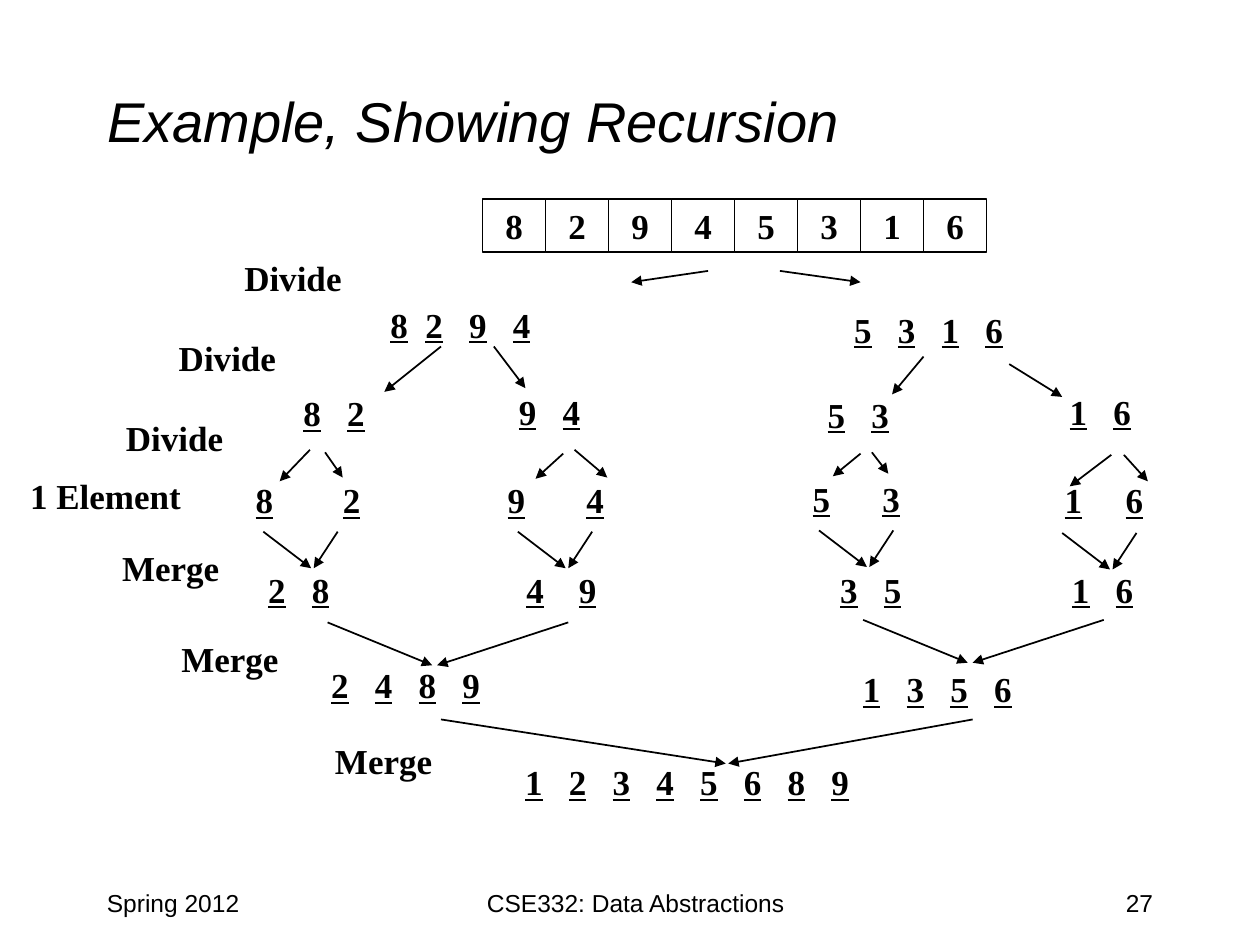
from itertools import accumulate

from lxml import etree
from pptx import Presentation
from pptx.dml.color import RGBColor
from pptx.enum import shapes, text
from pptx.oxml import ns
from pptx.util import Inches, Pt

BLACK = "000000"
SERIF, SANS = "Times New Roman", "Arial"
DIGIT, SPACE = 0.139, 0.0694
LINE_HEIGHT = 0.44


def colour(value):
    """Turn a hex string into a colour."""
    return RGBColor.from_string(value)


def format_runs(paragraph, font, size, bold=False, italic=False):
    """Give every run of a paragraph the same typeface and colour."""
    for run in paragraph.runs:
        run.font.name, run.font.size = font, Pt(size)
        run.font.bold, run.font.italic = bold, italic
        run.font.color.rgb = colour(BLACK)


def add_text(slide, left, top, width, height, wording, font=SERIF, size=20,
             bold=True, align=text.PP_ALIGN.LEFT):
    """Place one line of text and return its paragraph."""
    frame = slide.shapes.add_textbox(
        Inches(left), Inches(top), Inches(width), Inches(height)).text_frame
    frame.word_wrap = True
    paragraph = frame.paragraphs[0]
    paragraph.text = wording
    paragraph.alignment = align
    format_runs(paragraph, font, size, bold)
    return paragraph


def add_list(slide, left, top, numbers, gaps=None, joined=True):
    """Place an underlined list of digits, with gaps counted in space widths."""
    gaps = gaps or [3] * (len(numbers) - 1)
    stops = list(accumulate(DIGIT + gap * SPACE for gap in gaps))
    paragraph = add_text(slide, left, top, stops[-1] + 0.36, LINE_HEIGHT, "")
    tabs = etree.SubElement(paragraph._p.get_or_add_pPr(), ns.qn("a:tabLst"))
    for stop in stops:
        etree.SubElement(tabs, ns.qn("a:tab"), pos=str(Inches(stop)), algn="l")
    pieces = ["\t".join(numbers)] if joined else "\t".join(numbers)
    for piece in pieces:
        run = paragraph.add_run()
        run.text = piece
        run.font.underline = piece != "\t"
    format_runs(paragraph, SERIF, 20, bold=True)


def add_arrow(slide, x1, y1, x2, y2):
    """Draw a thin arrow that points at its second end."""
    arrow = slide.shapes.add_connector(
        shapes.MSO_CONNECTOR.STRAIGHT, Inches(x1), Inches(y1), Inches(x2), Inches(y2))
    arrow.line.color.rgb = colour(BLACK)
    arrow.line.width = Pt(1)
    etree.SubElement(arrow.line._get_or_add_ln(), ns.qn("a:tailEnd"), type="triangle")
    etree.SubElement(arrow._element.spPr, ns.qn("a:effectLst"))


def add_merge_arrows(slide, left, top, meeting, width, drop, gap):
    """Draw two arrows that come together below the span they start from."""
    add_arrow(slide, left, top, left + meeting, top + drop)
    add_arrow(slide, left + width, top, left + meeting + gap, top + drop)


def add_title(slide, left, top, width, height):
    """Move and format the title placeholder."""
    title = slide.shapes.title
    title.left, title.top = Inches(left), Inches(top)
    title.width, title.height = Inches(width), Inches(height)
    frame = title.text_frame
    frame.text = "Example, Showing Recursion"
    frame.vertical_anchor = text.MSO_ANCHOR.MIDDLE
    frame.paragraphs[0].alignment = text.PP_ALIGN.LEFT
    format_runs(frame.paragraphs[0], SANS, 32, italic=True)


def add_footer(slide, left, top):
    """Place the term, the course and the page number."""
    for offset, width, wording, align in (
            (0, 2.08, "Spring 2012", text.PP_ALIGN.LEFT),
            (2.42, 3.75, "CSE332: Data Abstractions", text.PP_ALIGN.CENTER),
            (6.42, 2.08, "27", text.PP_ALIGN.RIGHT)):
        add_text(slide, left + offset, top, width, 0.5, wording, SANS, 14, False, align)


def add_array(slide, left, top, width, height, numbers):
    """Draw the unsorted array as a row of equal cells."""
    cell_width = width / len(numbers)
    for index, number in enumerate(numbers):
        cell = slide.shapes.add_shape(
            shapes.MSO_SHAPE.RECTANGLE, Inches(left + index * cell_width),
            Inches(top), Inches(cell_width), Inches(height))
        cell.shadow.inherit = False
        cell.fill.background()
        cell.line.color.rgb = colour(BLACK)
        cell.line.width = Pt(0.75)
        frame = cell.text_frame
        frame.word_wrap = False
        frame.vertical_anchor = text.MSO_ANCHOR.MIDDLE
        frame.text = number
        frame.paragraphs[0].alignment = text.PP_ALIGN.CENTER
        format_runs(frame.paragraphs[0], SERIF, 20, bold=True)


def add_step_labels(slide, left, top):
    """Name each step down the left side."""
    for x, y, label in ((1.7, 0, "Divide"), (1.18, 0.63, "Divide"),
                        (0.76, 1.27, "Divide"), (0, 1.73, "1 Element"),
                        (0.73, 2.3, "Merge"), (1.2, 3.02, "Merge"),
                        (2.42, 3.83, "Merge")):
        add_text(slide, left + x, top + y, 1.45, LINE_HEIGHT, label)


def add_divide_steps(slide, left, top):
    """Split the array into halves, pairs and single elements."""
    for x, y, numbers, gaps in (
            (1, 0.36, "8294", [2, 3, 3]), (4.68, 0.4, "5316", None),
            (0.31, 1.06, "82", None), (2.02, 1.05, "94", None),
            (4.47, 1.07, "53", None), (6.39, 1.05, "16", None)):
        add_list(slide, left + x, top + y, numbers, gaps)
    for x, y, numbers, gap in ((-0.07, 1.75, "82", 8), (1.93, 1.75, "94", 7),
                               (4.35, 1.74, "53", 6), (6.35, 1.75, "16", 5)):
        add_list(slide, left + x, top + y, numbers, [gap], joined=False)
    for x1, y1, x2, y2 in (
            (3.62, 0.15, 3.01, 0.24), (4.19, 0.15, 4.83, 0.24),
            (1.5, 0.75, 1.05, 1.11), (1.92, 0.75, 2.17, 1.08),
            (5.33, 0.83, 5.08, 1.13), (6.01, 0.89, 6.43, 1.15),
            (0.46, 1.57, 0.22, 1.82), (0.58, 1.59, 0.72, 1.79),
            (2.47, 1.6, 2.25, 1.8), (2.56, 1.57, 2.82, 1.79),
            (4.83, 1.6, 4.61, 1.78), (4.92, 1.59, 5.05, 1.76),
            (6.82, 1.61, 6.49, 1.86), (6.92, 1.61, 7.11, 1.82)):
        add_arrow(slide, left + x1, top + y1, left + x2, top + y2)


def add_merge_steps(slide, left, top):
    """Join single elements into sorted pairs, halves and the whole."""
    for x, y, numbers, gaps in (
            (0.03, 0.46, "28", None), (2.08, 0.46, "49", [4]),
            (4.57, 0.46, "35", None), (6.41, 0.46, "16", None),
            (0.53, 1.22, "2489", None), (4.75, 1.25, "1356", None),
            (2.07, 1.99, "12345689", None)):
        add_list(slide, left + x, top + y, numbers, gaps)
    for x, y in ((0.09, 0.22), (2.11, 0.22), (4.5, 0.21), (6.43, 0.23)):
        add_merge_arrows(slide, left + x, top + y, 0.38, 0.59, 0.29, 0.02)
    for x, y in ((0.6, 0.94), (4.85, 0.92)):
        add_merge_arrows(slide, left + x, top + y, 0.83, 1.91, 0.34, 0.04)
    add_merge_arrows(slide, left + 1.5, top + 1.71, 2.26, 4.22, 0.35, 0.02)


def main():
    """Build the merge sort slide and save it."""
    deck = Presentation()
    deck.slide_width, deck.slide_height = Inches(10), Inches(7.5)
    slide = deck.slides.add_slide(deck.slide_layouts.get_by_name("Title Only"))
    add_title(slide, 0.75, 0.33, 8.5, 1.25)
    add_array(slide, 3.83, 1.58, 4, 0.42, "82945316")
    add_step_labels(slide, 0.14, 1.99)
    add_divide_steps(slide, 2, 2)
    add_merge_steps(slide, 2, 4)
    add_footer(slide, 0.75, 7)
    deck.save("out.pptx")


if __name__ == "__main__":
    main()
